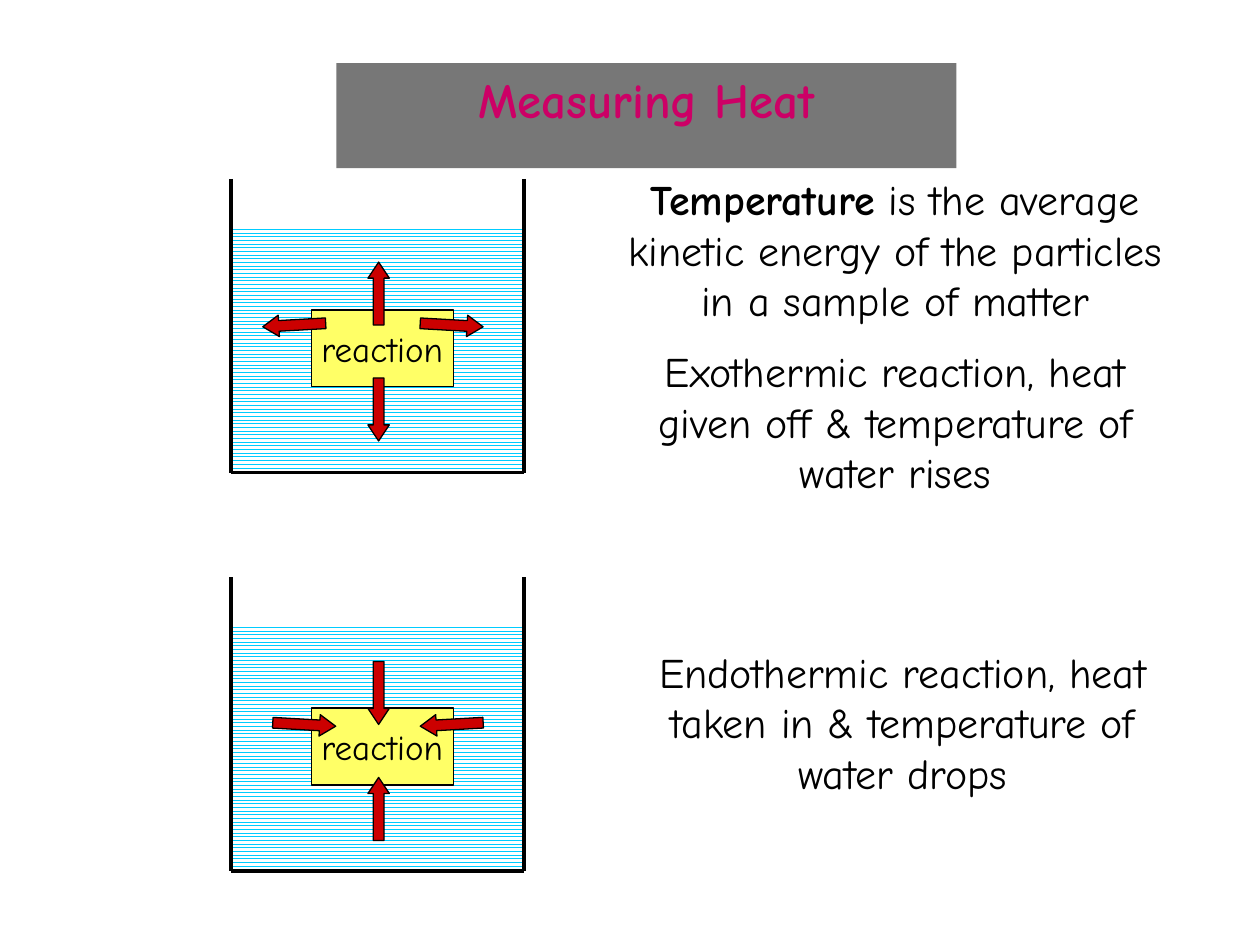
import dataclasses

import pptx
import pptx.dml.color
import pptx.enum.dml
import pptx.enum.shapes
import pptx.enum.text
import pptx.oxml
import pptx.oxml.ns
import pptx.util

Inches = pptx.util.Inches
Pt = pptx.util.Pt
SHAPES = pptx.enum.shapes.MSO_SHAPE
ANCHOR = pptx.enum.text.MSO_ANCHOR
AUTO_SIZE = pptx.enum.text.MSO_AUTO_SIZE
DOWN, LEFT, UP, RIGHT = 0, 86.8, 180, 273.2


@dataclasses.dataclass(frozen=True)
class Theme:
    font: str = "Comic Neue"
    title_size: int = 28
    body_size: int = 24
    label_size: int = 20
    ink: str = "000000"
    paper: str = "FFFFFF"
    title: str = "CC0066"
    banner: str = "777777"
    water: str = "00CCFF"
    reaction: str = "FFFF66"
    heat: str = "CC0000"
    outline: float = 0.75
    wall: float = 2.25


def rgb(value):
    return pptx.dml.color.RGBColor.from_string(value)


class SlideBuilder:
    """Draws the parts of the heat slide in one theme."""

    def __init__(self, slide, theme):
        self.slide = slide
        self.theme = theme

    def style(self, paragraph, size, color, bold=None):
        paragraph.alignment = pptx.enum.text.PP_ALIGN.CENTER
        paragraph.font.name = self.theme.font
        paragraph.font.size = Pt(size)
        paragraph.font.color.rgb = rgb(color)
        paragraph.font.bold = bold

    def title(self, text, left, top, width, height):
        banner = self.slide.shapes.title
        banner.left, banner.top = Inches(left), Inches(top)
        banner.width, banner.height = Inches(width), Inches(height)
        banner.fill.solid()
        banner.fill.fore_color.rgb = rgb(self.theme.banner)
        frame = banner.text_frame
        frame.text = text
        frame.word_wrap = True
        frame.auto_size = AUTO_SIZE.SHAPE_TO_FIT_TEXT
        frame.vertical_anchor = ANCHOR.TOP
        self.style(frame.paragraphs[0], self.theme.title_size, self.theme.title, True)

    def text(self, paragraphs, left, top, width, height):
        box = self.slide.shapes.add_textbox(
            Inches(left), Inches(top), Inches(width), Inches(height))
        frame = box.text_frame
        frame.word_wrap = True
        frame.auto_size = AUTO_SIZE.SHAPE_TO_FIT_TEXT
        for index, (term, wording) in enumerate(paragraphs):
            paragraph = frame.add_paragraph() if index else frame.paragraphs[0]
            self.style(paragraph, self.theme.body_size, self.theme.ink)
            if index:
                paragraph.space_before = Pt(self.theme.body_size / 2)
            if term:
                term_run = paragraph.add_run()
                term_run.text = term
                term_run.font.bold = True
            paragraph.add_run().text = wording

    def shape(self, group, preset, left, top, width, height, fill=None):
        shape = group.shapes.add_shape(
            preset, Inches(left), Inches(top), Inches(width), Inches(height))
        shape.shadow.inherit = False
        if fill:
            shape.fill.solid()
            shape.fill.fore_color.rgb = rgb(fill)
            shape.line.color.rgb = rgb(self.theme.ink)
            shape.line.width = Pt(self.theme.outline)
        return shape

    def water(self, group, left, top, width, height):
        water = self.shape(group, SHAPES.RECTANGLE, left, top, width, height)
        water.fill.patterned()
        water.fill.pattern = pptx.enum.dml.MSO_PATTERN.ZIG_ZAG
        water.fill.fore_color.rgb = rgb(self.theme.water)
        water.fill.back_color.rgb = rgb(self.theme.paper)
        water.line.fill.background()

    def reaction(self, group, left, top, width, height):
        reaction = self.shape(
            group, SHAPES.RECTANGLE, left, top, width, height, self.theme.reaction)
        frame = reaction.text_frame
        frame.text = "reaction"
        frame.word_wrap = False
        frame.vertical_anchor = ANCHOR.MIDDLE
        self.style(frame.paragraphs[0], self.theme.label_size, self.theme.ink)

    def wall(self, group, x1, y1, x2, y2):
        wall = group.shapes.add_connector(
            pptx.enum.shapes.MSO_CONNECTOR.STRAIGHT,
            Inches(x1), Inches(y1), Inches(x2), Inches(y2))
        wall.line.color.rgb = rgb(self.theme.ink)
        wall.line.width = Pt(self.theme.wall)
        properties = wall._element.spPr
        properties.append(properties.makeelement(pptx.oxml.ns.qn("a:effectLst"), {}))

    def heat_arrow(self, group, left, top, direction):
        arrow = self.shape(
            group, SHAPES.DOWN_ARROW, left, top, 0.17, 0.5, self.theme.heat)
        arrow.adjustments[0] = 0.5
        arrow.adjustments[1] = 0.75
        arrow.rotation = direction

    def beaker(self, left, top, heat_arrows):
        side = 2.33
        right, bottom = left + side, top + side
        group = self.slide.shapes.add_group_shape()
        self.water(group, left, top + 0.37, side, side - 0.37)
        self.reaction(group, left + 0.64, top + 1.04, 1.13, 0.61)
        for ends in ((left, top, left, bottom), (right, top, right, bottom),
                     (left, bottom, right, bottom)):
            self.wall(group, *ends)
        for across, down, direction in heat_arrows:
            self.heat_arrow(group, left + across, top + down, direction)


def main():
    presentation = pptx.Presentation()
    presentation.slide_width, presentation.slide_height = Inches(10), Inches(7.5)
    slide = presentation.slides.add_slide(presentation.slide_layouts[5])
    builder = SlideBuilder(slide, Theme())

    builder.title("Measuring Heat", 2.67, 0.5, 4.92, 0.57)
    heat_out = [(1.09, 1.58, DOWN), (1.67, 0.91, RIGHT),
                (0.42, 0.91, LEFT), (1.09, 0.66, UP)]
    heat_in = [(1.09, 0.67, DOWN), (1.09, 1.59, UP),
               (0.5, 0.92, RIGHT), (1.67, 0.92, LEFT)]
    for top, heat_arrows in ((1.42, heat_out), (4.58, heat_in)):
        builder.beaker(1.83, top, heat_arrows)

    builder.text([
        ("Temperature",
         " is the average kinetic energy of the particles in a sample of matter"),
        ("", "Exothermic reaction, heat given off & temperature of water rises"),
    ], 4.77, 1.33, 4.67, 3.13)
    builder.text([
        ("", "Endothermic reaction, heat taken in & temperature of water drops"),
    ], 4.83, 5.08, 4.67, 1.3)

    presentation.save("out.pptx")


if __name__ == "__main__":
    main()
